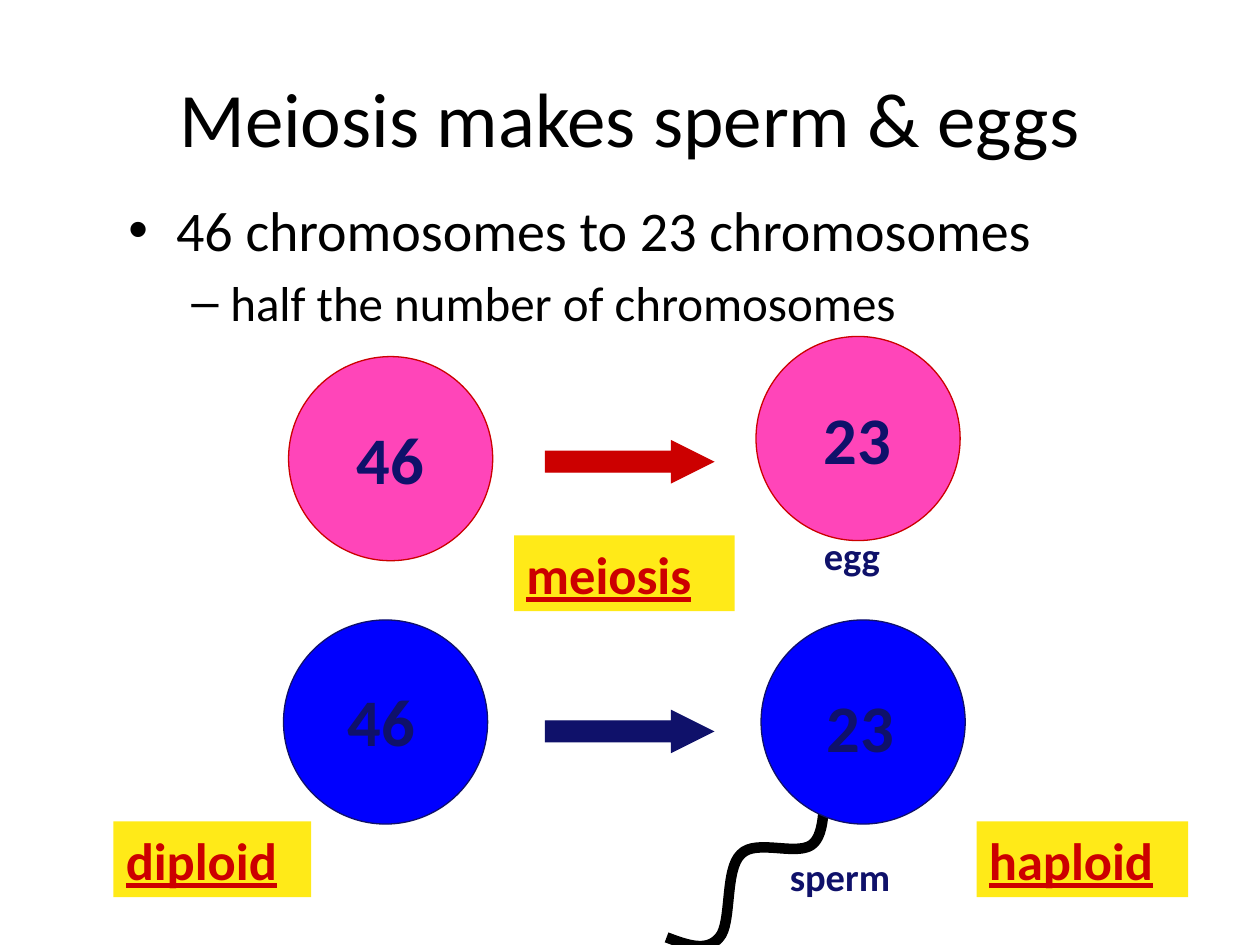
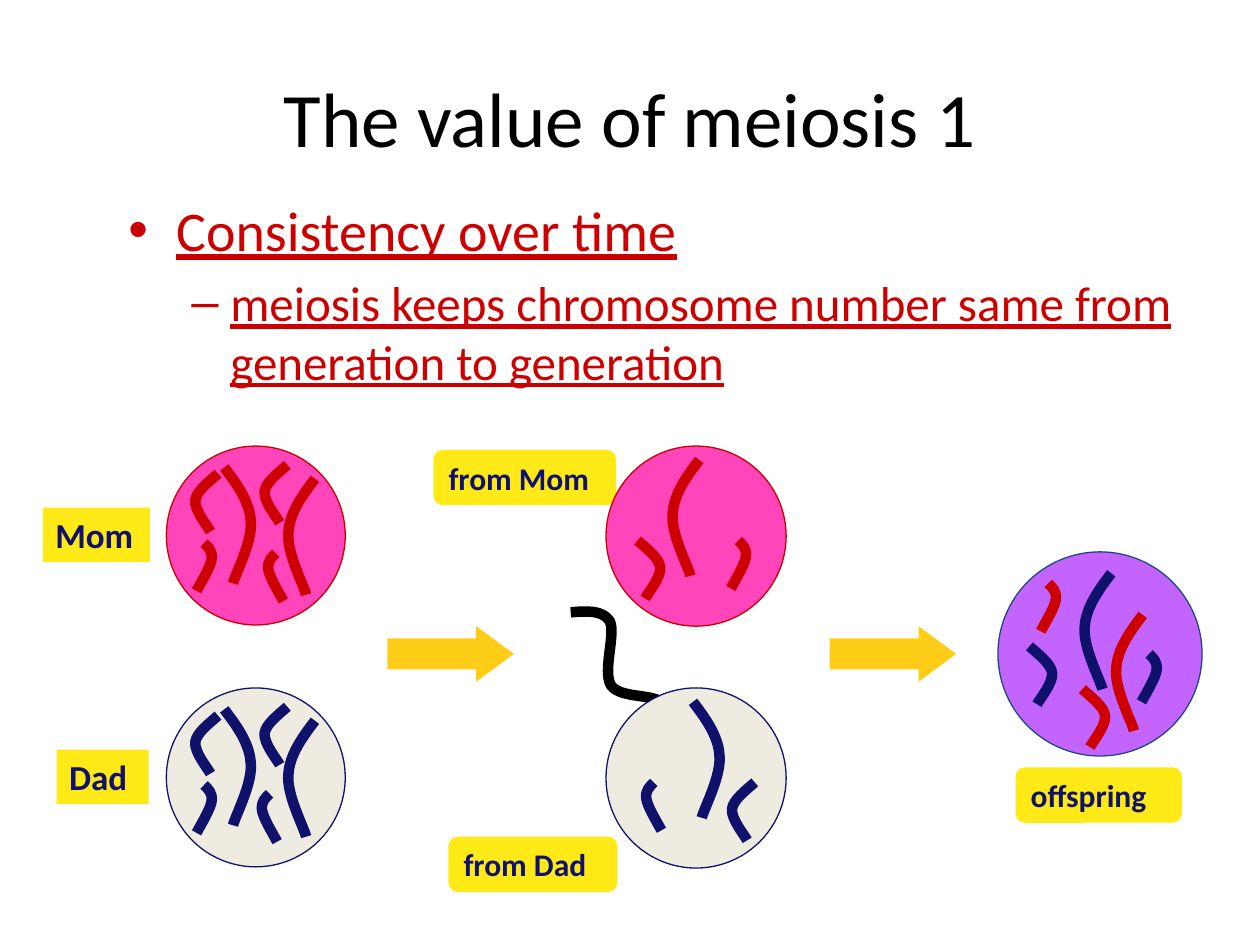
import pptx
import pptx.oxml.ns
import pptx.util
from lxml import etree
from pptx.dml.color import RGBColor
from pptx.enum.shapes import MSO_SHAPE
from pptx.enum.text import MSO_ANCHOR, MSO_AUTO_SIZE, PP_ALIGN

PX = 9144  # EMU per px, 100 px to the inch
FONT = "Calibri"
BULLET_FONT = "Arial"
BLACK = RGBColor(0x00, 0x00, 0x00)
RED = RGBColor(0xCC, 0x00, 0x00)
NAVY = RGBColor(0x0F, 0x11, 0x6A)
PINK = RGBColor(0xFF, 0x45, 0xB9)
BLUE = RGBColor(0x00, 0x00, 0xFF)
CREAM = RGBColor(0xEE, 0xEC, 0xE1)
PURPLE = RGBColor(0xC3, 0x64, 0xFF)
STEEL = RGBColor(0x1F, 0x49, 0x7D)
YELLOW = RGBColor(0xFF, 0xEA, 0x18)
GOLD = RGBColor(0xFF, 0xCC, 0x18)

# Bullet, left margin, hanging indent and text size of each outline level
LEVELS = [("•", 38, 38, 32), ("–", 81, 31, 28)]

# Chromosome outlines: width, then a start point and cubic Bézier points
CHROMOSOMES = {
    "long": (23, [(23, 0), (13, 13), (3, 27), (2, 42),
                  (0, 58), (14, 84), (16, 92)]),
    "medium": (19, [(0, 0), (8, 7), (17, 14), (18, 21),
                    (19, 29), (8, 42), (6, 46)]),
    "short": (13, [(0, 38), (5, 29), (11, 19), (12, 13),
                   (13, 6), (9, 3), (6, 0)]),
}

# Contents of a cell: kind, mirrored, left and top inside the cell
PARENT_SET = [("long", True, 46, 17), ("short", False, 24, 77),
              ("medium", True, 77, 15), ("long", False, 95, 26),
              ("medium", True, 22, 22)]
GAMETE_SET = [("long", False, 51, 11), ("short", False, 99, 75),
              ("medium", False, 25, 75)]
OFFSPRING_MOM_SET = [("long", False, 92, 50), ("short", False, 34, 25),
                     ("medium", False, 67, 109)]
OFFSPRING_DAD_SET = [("long", False, 67, 17), ("short", False, 114, 81),
                     ("medium", False, 25, 75)]

SPERM_TAIL = [
    (654, 603), (655, 601), (656, 600), (654, 611), (653, 622), (657, 658),
    (646, 669), (635, 681), (600, 665), (588, 678), (575, 690), (581, 733),
    (571, 744), (561, 756), (545, 750), (529, 744)]
DAD_GAMETE_TAIL = [
    (522, 609), (522, 610), (523, 611), (524, 603), (524, 595), (533, 569),
    (527, 559), (520, 550), (493, 555), (485, 544), (478, 533), (489, 503),
    (484, 493), (478, 484), (466, 485), (453, 486)]


def emu(*lengths):
    return [length * PX for length in lengths]


def add_xml(parent, tag, **attributes):
    return etree.SubElement(parent, pptx.oxml.ns.qn(tag), attributes)


def add_run(paragraph, text, size, color, bold=False, underline=False):
    run = paragraph.add_run()
    run.text = text
    font = run.font
    font.name, font.size = FONT, pptx.util.Pt(size)
    font.color.rgb = color
    font.bold, font.underline = bold, underline


def paint(shape, fill, line, line_width):
    """Fill and outline a shape; None leaves either one out."""
    shape.shadow.inherit = False
    if fill is None:
        shape.fill.background()
    else:
        shape.fill.solid()
        shape.fill.fore_color.rgb = fill
    if line is None:
        shape.line.fill.background()
    else:
        shape.line.color.rgb = line
        shape.line.width = pptx.util.Pt(line_width)


def add_filled(region, preset, box, fill, line=None):
    shape = region.shapes.add_shape(preset, *emu(*box))
    paint(shape, fill, line, 0.75)
    return shape


def write_label(shape, text, size, color=NAVY, underline=False):
    frame = shape.text_frame
    frame.word_wrap = False
    frame.auto_size = MSO_AUTO_SIZE.SHAPE_TO_FIT_TEXT
    frame.vertical_anchor = MSO_ANCHOR.MIDDLE
    paragraph = frame.paragraphs[0]
    paragraph.alignment = PP_ALIGN.LEFT
    add_run(paragraph, text, size, color, True, underline)


def add_plain_label(region, box, text, size):
    write_label(region.shapes.add_textbox(*emu(*box)), text, size)


def add_tag(region, box, text, size, preset=MSO_SHAPE.RECTANGLE, fill=YELLOW, **style):
    """Filled box that names a part of the diagram."""
    write_label(add_filled(region, preset, box, fill), text, size, **style)


def add_arrow(slide, box, color, shaft, head):
    arrow = add_filled(slide, MSO_SHAPE.RIGHT_ARROW, box, color, color)
    arrow.adjustments[0], arrow.adjustments[1] = shaft, head
    outline = arrow._element.spPr.find(pptx.oxml.ns.qn("a:ln"))
    add_xml(outline, "a:miter", lim="800000")


def add_curve(region, points, color, fill=None):
    """Draw a chain of cubic curves: a start, then three points for each."""
    start, *rest = [emu(*point) for point in points]
    builder = region.shapes.build_freeform(*start)
    builder.add_line_segments(rest, close=False)
    curve = builder.convert_to_shape()
    paint(curve, fill, color, 6)
    outline = next(curve._element.iter(pptx.oxml.ns.qn("a:path")))
    segments = outline.findall(pptx.oxml.ns.qn("a:lnTo"))
    for first in range(0, len(segments), 3):
        bend = add_xml(outline, "a:cubicBezTo")
        for segment in segments[first:first + 3]:
            bend.append(segment[0])
            outline.remove(segment)


def add_chromosomes(region, cell_left, cell_top, chromosomes, color, fill):
    for kind, mirrored, left, top in chromosomes:
        width, outline = CHROMOSOMES[kind]
        add_curve(region, [(cell_left + left + (width - x if mirrored else x),
                            cell_top + top + y) for x, y in outline], color, fill)


def mirror(chromosomes, cell_width):
    return [(kind, not mirrored, cell_width - left - CHROMOSOMES[kind][0], top)
            for kind, mirrored, left, top in chromosomes]


def add_cell(region, left, top, size, fill, line):
    add_filled(region, MSO_SHAPE.OVAL, (left, top, size, size), fill, line)


def add_egg_cell(slide, left, top, count):
    cell = slide.shapes.add_group_shape()
    add_cell(cell, left, top, 162, PINK, RED)
    add_tag(cell, (left + 44, top + 44, 79, 73), count, 38, fill=PINK)


def add_sperm_cell(slide, left, top, count, count_offset, tail=None):
    cell = slide.shapes.add_group_shape()
    if tail:
        add_curve(cell, tail, BLACK)
    add_cell(cell, left, top, 162, BLUE, NAVY)
    dx, dy = count_offset
    add_plain_label(cell, (left + dx, top + dy, 79, 73), count, 38)


def add_outline(slide, box, lines, color, underline=False):
    frame = slide.shapes.add_textbox(*emu(*box)).text_frame
    frame.word_wrap = True
    for level, (text, (bullet, margin, hanging, size)) in enumerate(zip(lines, LEVELS)):
        paragraph = frame.add_paragraph() if level else frame.paragraphs[0]
        paragraph.level = level
        paragraph.space_before = pptx.util.Pt(size * 0.2)
        add_run(paragraph, text, size, color, underline=underline)
        properties = paragraph._p.get_or_add_pPr()
        properties.set("marL", str(margin * PX))
        properties.set("indent", str(-hanging * PX))
        add_xml(properties, "a:buFont", typeface=BULLET_FONT)
        add_xml(properties, "a:buChar", char=bullet)


def add_titled_slide(deck, text):
    slide = deck.slides.add_slide(deck.slide_layouts[5])
    title = slide.shapes.title
    title.left, title.top, title.width, title.height = emu(50, 30, 900, 125)
    title.text_frame.vertical_anchor = MSO_ANCHOR.MIDDLE
    paragraph = title.text_frame.paragraphs[0]
    paragraph.alignment = PP_ALIGN.CENTER
    add_run(paragraph, text, 44, BLACK)
    return slide


def build_gamete_slide(deck):
    slide = add_titled_slide(deck, "Meiosis makes sperm & eggs")
    add_outline(slide, (92, 150, 850, 133),
                ["46 chromosomes to 23 chromosomes",
                 "half the number of chromosomes"], BLACK)
    add_egg_cell(slide, 600, 267, "23")
    add_sperm_cell(slide, 604, 492, "23", (42, 48), SPERM_TAIL)
    add_arrow(slide, (433, 350, 133, 33), RED, 0.5, 1)
    add_sperm_cell(slide, 225, 492, "46", (41, 43))
    add_plain_label(slide, (644, 417, 74, 47), "egg", 22)
    add_plain_label(slide, (617, 672, 112, 47), "sperm", 22)
    add_egg_cell(slide, 229, 283, "46")
    add_arrow(slide, (433, 564, 133, 33), NAVY, 0.5, 1)
    for left, top, width, term in [(408, 425, 175, "meiosis"),
                                   (775, 652, 168, "haploid"),
                                   (90, 652, 157, "diploid")]:
        add_tag(slide, (left, top, width, 60), term, 30, color=RED, underline=True)


def add_parent(slide, top, tag_left, tag_width, name, cell_fill, color,
               last_short, chromosome_fill=None):
    parent = slide.shapes.add_group_shape()
    add_tag(parent, (tag_left, top + 49, tag_width, 43), name, 20)
    add_cell(parent, 132, top, 142, cell_fill, color)
    add_chromosomes(parent, 132, top, PARENT_SET + [last_short], color, chromosome_fill)


def add_gamete(slide, top, chromosomes, cell_fill, color,
               chromosome_fill=None, tail=None):
    gamete = slide.shapes.add_group_shape()
    if tail:
        add_curve(gamete, tail, BLACK)
    add_cell(gamete, 481, top, 143, cell_fill, color)
    add_chromosomes(gamete, 481, top, chromosomes, color, chromosome_fill)


def add_offspring(slide, left, top):
    offspring = slide.shapes.add_group_shape()
    add_cell(offspring, left, top, 162, PURPLE, STEEL)
    add_chromosomes(offspring, left, top, OFFSPRING_DAD_SET, NAVY, PURPLE)
    add_chromosomes(offspring, left, top, OFFSPRING_MOM_SET, RED, PURPLE)


def build_consistency_slide(deck):
    slide = add_titled_slide(deck, "The value of meiosis 1")
    add_outline(slide, (92, 150, 892, 192),
                ["Consistency over time",
                 "meiosis keeps chromosome number same from generation to generation"],
                RED, underline=True)
    for left, top, width, source in [(344, 357, 145, "from Mom"),
                                     (356, 664, 134, "from Dad"),
                                     (806, 609, 132, "offspring")]:
        add_tag(slide, (left, top, width, 44), source, 18, MSO_SHAPE.ROUNDED_RECTANGLE)
    mom_top, dad_top = 354, 546
    add_gamete(slide, mom_top, GAMETE_SET, PINK, RED, PINK)
    add_gamete(slide, dad_top, mirror(GAMETE_SET, 143), CREAM, NAVY,
               tail=DAD_GAMETE_TAIL)
    add_offspring(slide, 792, 438)
    for left in (659, 308):
        add_arrow(slide, (left, 498, 99, 42), GOLD, 0.558, 0.679)
    add_parent(slide, dad_top, 45, 73, "Dad", CREAM, NAVY, ("short", True, 75, 84))
    add_parent(slide, mom_top, 34, 85, "Mom", PINK, RED, ("short", True, 80, 85), PINK)


def main():
    deck = pptx.Presentation()
    deck.slide_width, deck.slide_height = emu(1000, 750)
    build_gamete_slide(deck)
    build_consistency_slide(deck)
    deck.save("out.pptx")


if __name__ == "__main__":
    main()
